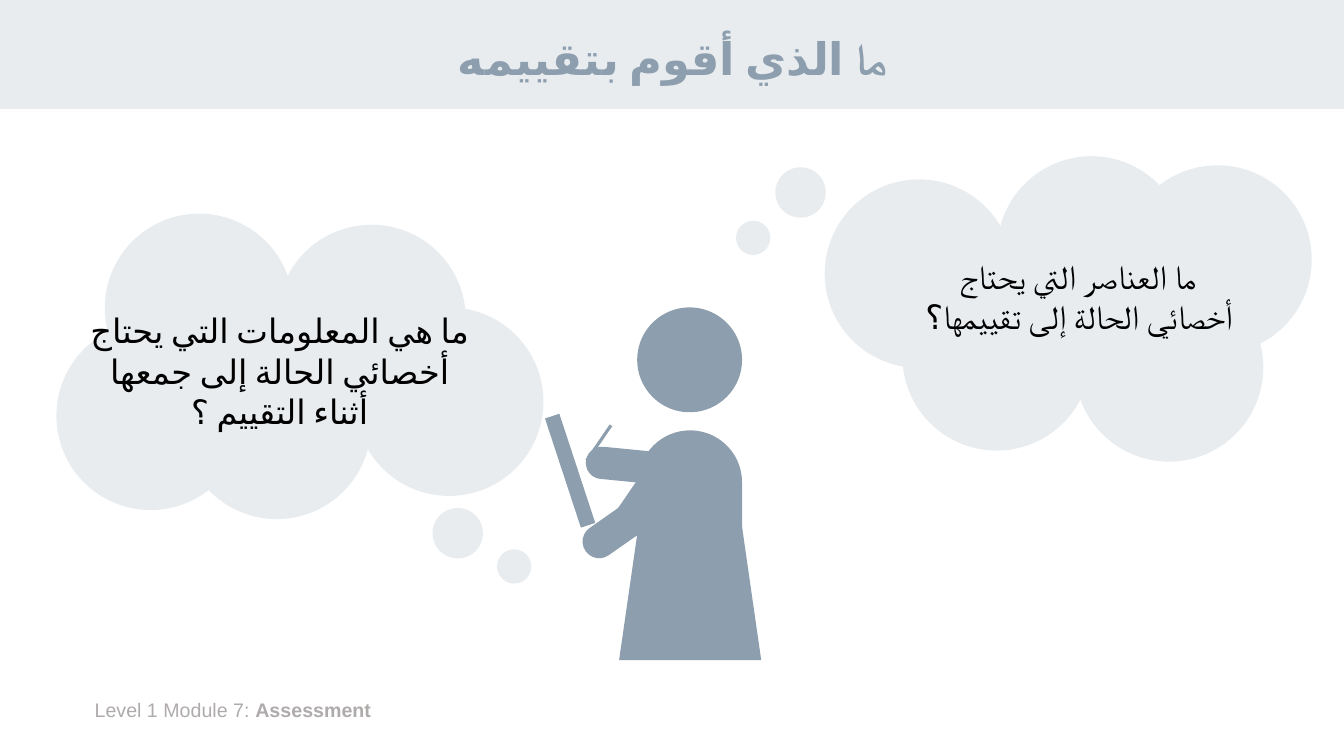
from typing import NamedTuple

from lxml import etree
from pptx import Presentation
from pptx.dml.color import RGBColor
from pptx.enum.lang import MSO_LANGUAGE_ID
from pptx.enum.shapes import MSO_CONNECTOR, MSO_SHAPE
from pptx.enum.text import MSO_ANCHOR, MSO_AUTO_SIZE, PP_ALIGN
from pptx.oxml.ns import qn
from pptx.util import Inches, Pt

OVAL = MSO_SHAPE.OVAL
RECTANGLE = MSO_SHAPE.RECTANGLE
ROUND_TOP = MSO_SHAPE.ROUND_2_SAME_RECTANGLE
TRAPEZOID = MSO_SHAPE.FLOWCHART_MANUAL_OPERATION
STRAIGHT = MSO_CONNECTOR.STRAIGHT
CENTER = PP_ALIGN.CENTER
MIDDLE = MSO_ANCHOR.MIDDLE
FIT_SHAPE = MSO_AUTO_SIZE.SHAPE_TO_FIT_TEXT
ARABIC = MSO_LANGUAGE_ID.ARABIC

PALE, SLATE, GREY, BLACK = "E8ECEF", "8D9EAE", "AFABAB", "000000"


class Part(NamedTuple):
    kind: int
    left: float
    top: float
    width: float
    height: float
    rotation: float = 0
    rounding: float | None = None


class Wording(NamedTuple):
    words: str
    language: MSO_LANGUAGE_ID | None = None


class Thought(NamedTuple):
    left: float
    top: float
    width: float
    height: float
    wordings: list[Wording]


PUFF_SIZE = 1.87
RIGHT_PUFFS = [(8.18, 1.78), (10.66, 2.71), (9.89, 1.55), (11.14, 1.64), (8.95, 2.6)]
# The left cloud is the right one turned half round.
LEFT_PUFFS = [(11.7 - left, 4.83 - top) for left, top in RIGHT_PUFFS]

BUBBLES = [(7.69, 1.66, 0.5), (7.3, 2.19, 0.34), (4.29, 5.04, 0.5), (4.93, 5.45, 0.34)]

HEADING = [Wording("ما "), Wording("الذي أقوم بتقييمه", ARABIC)]
THOUGHTS = [
    Thought(0.78, 3.03, 3.99, 1.31, [
        Wording("ما هي المعلومات التي يحتاج أخصائي الحالة إلى جمعها أثناء التقييم ؟", ARABIC)]),
    Thought(9, 2.49, 3.39, 0.91, [
        Wording("ما العناصر التي يحتاج أخصائي الحالة إلى تقييمها"), Wording("؟", ARABIC)]),
]

CASEWORKER = [
    Part(ROUND_TOP, 6.21, 4.58, 0.33, 0.79, 214.3, 0.493),
    Part(ROUND_TOP, 5.86, 5.05, 0.33, 0.53, 235, 0.493),
    Part(RECTANGLE, 5.58, 4.1, 0.15, 1.14, 341.8),
    Part(ROUND_TOP, 6.1, 4.17, 0.32, 0.9, 275.6, 0.493),
    Part(TRAPEZOID, 6.14, 4.59, 1.41, 1.96, 180),
    Part(ROUND_TOP, 6.33, 4.27, 1.03, 2.26, 0, 0.5),
    Part(OVAL, 6.32, 3.05, 1.04, 1.04),
]


def color(hex_code: str) -> RGBColor:
    return RGBColor.from_string(hex_code)


def draw_part(shapes, part: Part, fill: str) -> None:
    shape = shapes.add_shape(part.kind, Inches(part.left), Inches(part.top),
                             Inches(part.width), Inches(part.height))
    shape.rotation = part.rotation
    if part.rounding is not None:
        shape.adjustments[0] = part.rounding
        shape.adjustments[1] = 0
    shape.shadow.inherit = False
    shape.fill.solid()
    shape.fill.fore_color.rgb = color(fill)
    shape.line.fill.background()


def draw_cloud(slide, puffs: list[tuple[float, float]]) -> None:
    cloud = slide.shapes.add_group_shape()
    for left, top in puffs:
        draw_part(cloud.shapes, Part(OVAL, left, top, PUFF_SIZE, PUFF_SIZE), PALE)


def draw_caseworker(slide) -> None:
    figure = slide.shapes.add_group_shape()
    for part in CASEWORKER:
        draw_part(figure.shapes, part, SLATE)
    pen = figure.shapes.add_connector(STRAIGHT, Inches(6.06), Inches(4.22),
                                      Inches(5.82), Inches(4.57))
    pen.line.color.rgb = color(SLATE)
    pen.line.width = Pt(2.25)
    etree.SubElement(pen._element.spPr, qn("a:effectLst"))


def format_run(run, size: float, font: str, hex_code: str, bold: bool = False) -> None:
    run.font.size = Pt(size)
    run.font.name = font
    run.font.bold = bold
    run.font.color.rgb = color(hex_code)


def write_arabic(paragraph, wordings: list[Wording], size: float, hex_code: str,
                 bold: bool = False) -> None:
    paragraph.alignment = CENTER
    paragraph._p.get_or_add_pPr().set("rtl", "1")
    for wording in wordings:
        run = paragraph.add_run()
        run.text = wording.words
        format_run(run, size, "Calibri", hex_code, bold)
        run.font.language_id = wording.language
        etree.SubElement(run._r.get_or_add_rPr(), qn("a:cs"), typeface="Calibri")


def add_text_box(slide, left: float, top: float, width: float, height: float):
    """Add a wrapping text box and return its first paragraph."""
    box = slide.shapes.add_textbox(Inches(left), Inches(top), Inches(width), Inches(height))
    box.text_frame.word_wrap = True
    box.text_frame.auto_size = FIT_SHAPE
    return box.text_frame.paragraphs[0]


def write_title(slide) -> None:
    title = slide.shapes.title
    title.left, title.top = Inches(0.92), Inches(0.13)
    title.width, title.height = Inches(11.5), Inches(0.95)
    title.text_frame.vertical_anchor = MIDDLE
    heading = title.text_frame.paragraphs[0]
    heading.line_spacing = 0.9
    write_arabic(heading, HEADING, 32, SLATE, True)


def write_footer(slide) -> None:
    footer = add_text_box(slide, 0.84, 6.87, 11.35, 0.34)
    for words, bold in (("Level 1 Module 7: ", False), ("Assessment", True)):
        run = footer.add_run()
        run.text = words
        format_run(run, 14, "Arial", GREY, bold)


def write_thought(slide, thought: Thought) -> None:
    question = add_text_box(slide, thought.left, thought.top, thought.width, thought.height)
    write_arabic(question, thought.wordings, 24, BLACK)


def main() -> None:
    deck = Presentation()
    deck.slide_width, deck.slide_height = Inches(13.33), Inches(7.5)
    slide = deck.slides.add_slide(deck.slide_layouts.get_by_name("Title Only"))

    draw_part(slide.shapes, Part(RECTANGLE, 0, 0, 13.33, 1.08), PALE)
    # The title placeholder comes first, so it is lifted above the band.
    slide.shapes._spTree.append(slide.shapes.title._element)
    write_title(slide)
    write_footer(slide)

    for puffs in (LEFT_PUFFS, RIGHT_PUFFS):
        draw_cloud(slide, puffs)
    for thought in THOUGHTS:
        write_thought(slide, thought)
    for left, top, size in BUBBLES:
        draw_part(slide.shapes, Part(OVAL, left, top, size, size), PALE)
    draw_caseworker(slide)

    deck.save("out.pptx")


if __name__ == "__main__":
    main()
